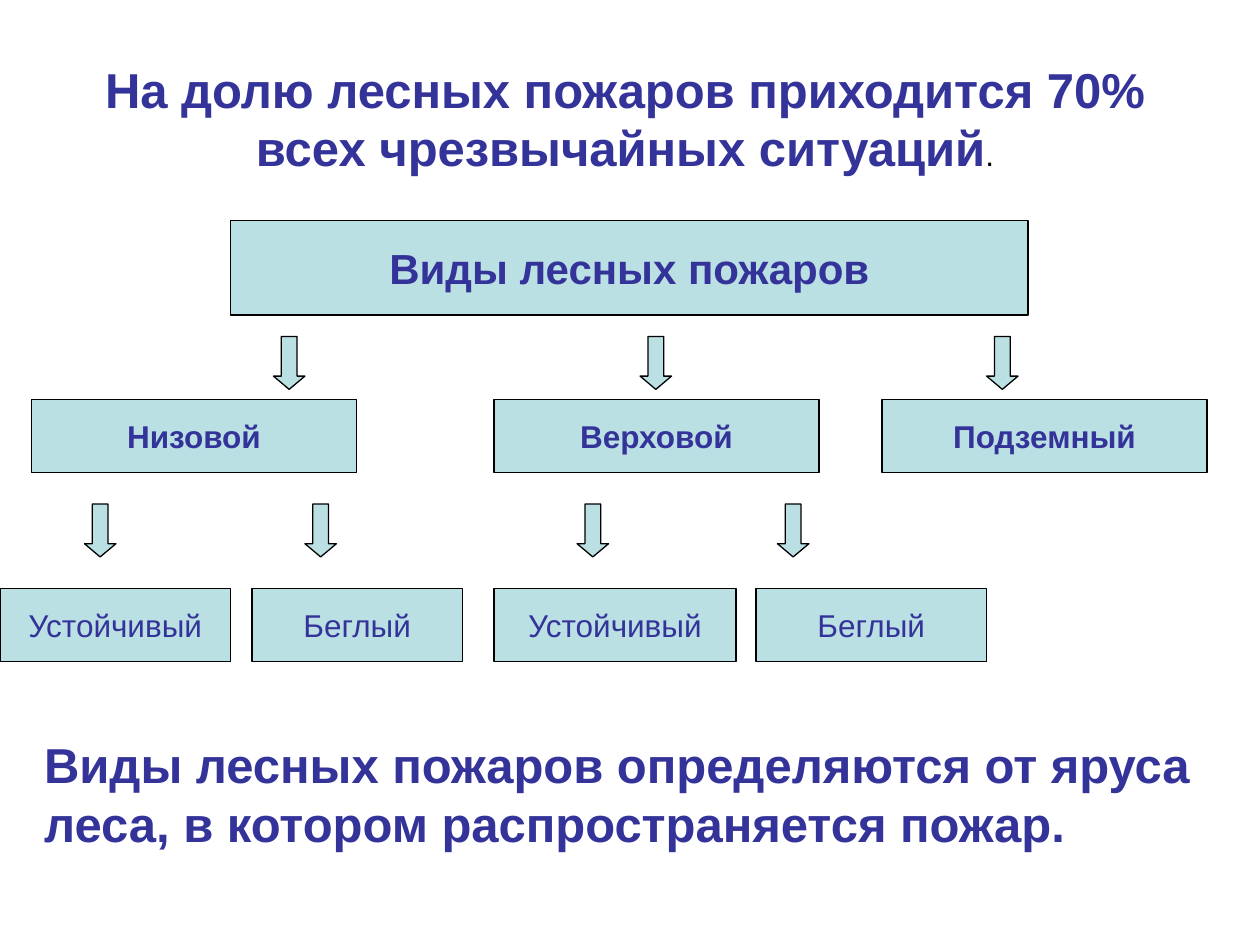
from pptx import Presentation
from pptx.dml.color import RGBColor
from pptx.enum.shapes import MSO_SHAPE as Shape
from pptx.enum.text import MSO_ANCHOR as Anchor, MSO_AUTO_SIZE as AutoSize, PP_ALIGN as Align
from pptx.util import Inches, Pt

INDIGO = RGBColor(0x33, 0x33, 0x99)
PALE_TEAL = RGBColor(0xBB, 0xE0, 0xE3)
BLACK = RGBColor(0, 0, 0)
TITLE_ONLY = 5


def add_text(para, text, size=18, bold=False, color=INDIGO, font="Arial", align=Align.CENTER):
    para.alignment = align
    span = para.add_run()
    span.text = text
    span.font.name = font
    span.font.size = Pt(size)
    span.font.bold = bold
    span.font.color.rgb = color


class FireSlide:
    def __init__(self, deck):
        self.page = deck.slides.add_slide(deck.slide_layouts[TITLE_ONLY])

    def title(self, text, left, top, width, height):
        box = self.page.shapes.title
        box.left, box.top = Inches(left), Inches(top)
        box.width, box.height = Inches(width), Inches(height)
        frame = box.text_frame
        frame.word_wrap = True
        frame.auto_size = AutoSize.NONE
        frame.vertical_anchor = Anchor.MIDDLE
        add_text(frame.paragraphs[0], text, size=28, bold=True, align=Align.LEFT)

    def heading(self, text, ending, left, top, width, height):
        box = self.page.shapes.add_textbox(
            Inches(left), Inches(top), Inches(width), Inches(height))
        box.text_frame.word_wrap = True
        para = box.text_frame.paragraphs[0]
        add_text(para, text, size=28, bold=True)
        add_text(para, ending, color=BLACK)

    def filled_shape(self, kind, left, top, width, height):
        shape = self.page.shapes.add_shape(
            kind, Inches(left), Inches(top), Inches(width), Inches(height))
        shape.shadow.inherit = False
        shape.fill.solid()
        shape.fill.fore_color.rgb = PALE_TEAL
        shape.line.color.rgb = BLACK
        shape.line.width = Pt(0.75)
        return shape

    def process(self, text, left, top, width, height=0.58, **style):
        box = self.filled_shape(Shape.FLOWCHART_PROCESS, left, top, width, height)
        box.text_frame.word_wrap = False
        box.text_frame.vertical_anchor = Anchor.MIDDLE
        add_text(box.text_frame.paragraphs[0], text, **style)

    def arrow(self, left, top):
        arrow = self.filled_shape(Shape.DOWN_ARROW, left, top, 0.25, 0.42)
        arrow.adjustments[1] = 0.42


def main():
    deck = Presentation()
    deck.slide_width, deck.slide_height = Inches(10), Inches(7.5)
    slide = FireSlide(deck)

    slide.title("Виды лесных пожаров определяются от яруса леса, "
                "в котором распространяется пожар.", 0.25, 5.67, 9.75, 1.25)
    slide.process("Виды лесных пожаров", 1.83, 1.75, 6.33, 0.75, size=24, bold=True)

    for text, left in (("Низовой", 0.25), ("Верховой", 3.92), ("Подземный", 7)):
        slide.process(text, left, 3.17, 2.58, bold=True)

    subtypes = (("Устойчивый", 0, 1.83), ("Беглый", 2, 1.67),
                ("Устойчивый", 3.92, 1.92), ("Беглый", 6, 1.83))
    for text, left, width in subtypes:
        slide.process(text, left, 4.67, width)

    for top, lefts in ((2.67, (2.17, 5.08, 7.83)), (4, (0.67, 2.42, 4.58, 6.17))):
        for left in lefts:
            slide.arrow(left, top)

    slide.heading("На долю лесных пожаров приходится 70% всех чрезвычайных ситуаций",
                  ".", 0.5, 0.42, 8.92, 1.49)
    deck.save("out.pptx")


if __name__ == "__main__":
    main()
